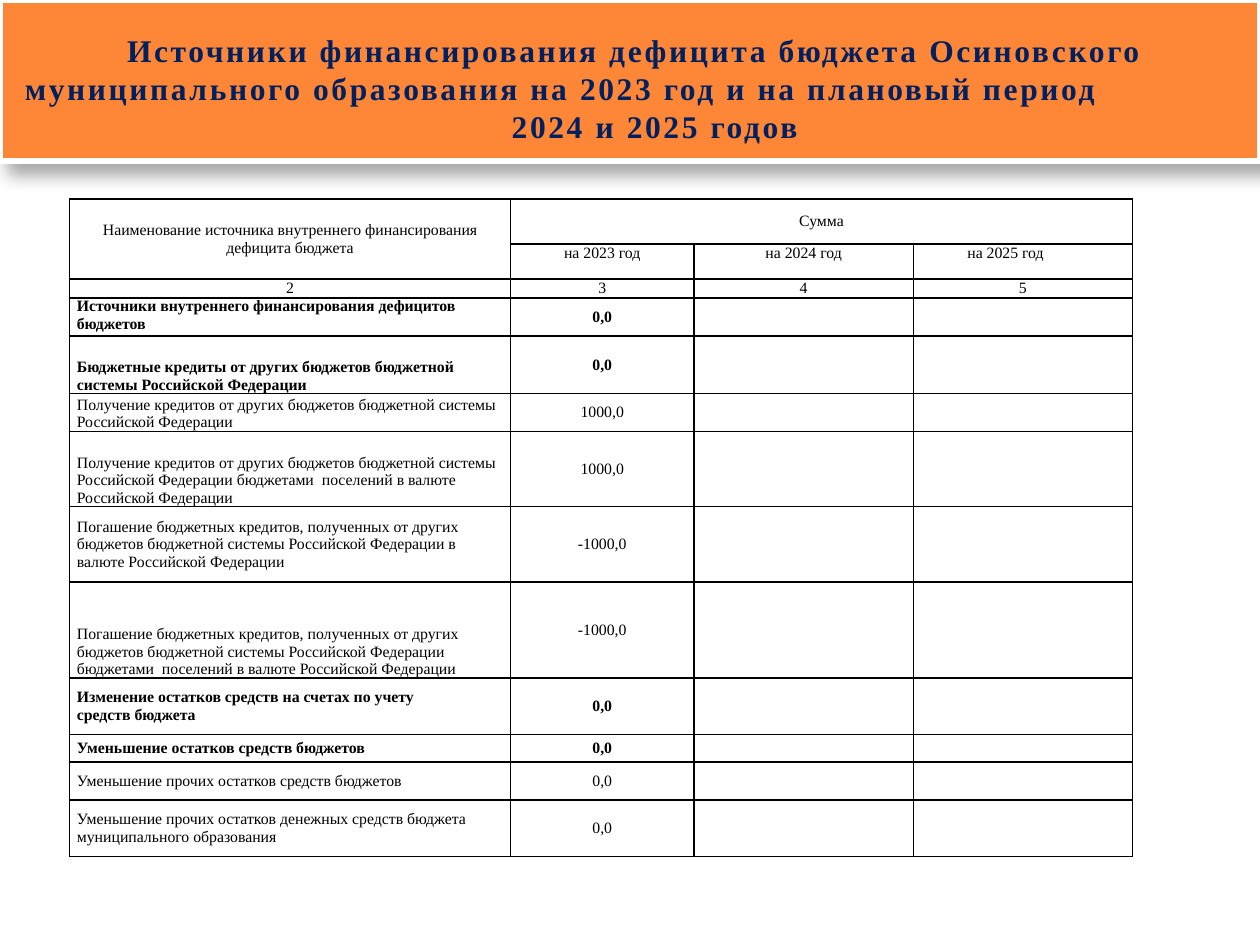
from lxml import etree
from pptx import Presentation
from pptx.dml.color import RGBColor
from pptx.enum.shapes import MSO_SHAPE
from pptx.enum.text import MSO_ANCHOR, PP_ALIGN
from pptx.oxml.ns import qn
from pptx.util import Cm, Pt

ORANGE = RGBColor(0xFE, 0x86, 0x37)
NAVY = RGBColor(0x00, 0x20, 0x60)
WHITE = RGBColor(0xFF, 0xFF, 0xFF)
BLACK = RGBColor(0x00, 0x00, 0x00)
RECT = MSO_SHAPE.RECTANGLE
LEFT, MID = PP_ALIGN.LEFT, PP_ALIGN.CENTER
TOP, CENTER, BOTTOM = MSO_ANCHOR.TOP, MSO_ANCHOR.MIDDLE, MSO_ANCHOR.BOTTOM

# text, alignment, left indent in cm
TITLE = [
    ("Источники финансирования дефицита бюджета Осиновского", MID, 0.16),
    ("муниципального образования на 2023 год и на плановый период", LEFT, 0.25),
    ("2024 и 2025 годов", MID, 1),
]
YEARS = ["на 2023 год", "на 2024 год", "на 2025 год"]
# name, value, anchor of the name, bold
SOURCES = [
    ("Источники внутреннего финансирования дефицитов бюджетов", "0,0", TOP, True),
    ("Бюджетные кредиты от других бюджетов бюджетной системы Российской Федерации",
     "0,0", BOTTOM, True),
    ("Получение кредитов от других бюджетов бюджетной системы Российской Федерации",
     "1000,0", BOTTOM, False),
    ("Получение кредитов от других бюджетов бюджетной системы Российской Федерации "
     "бюджетами  поселений в валюте Российской Федерации", "1000,0", BOTTOM, False),
    ("Погашение бюджетных кредитов, полученных от других бюджетов бюджетной системы "
     "Российской Федерации в валюте Российской Федерации", "-1000,0", CENTER, False),
    ("Погашение бюджетных кредитов, полученных от других бюджетов бюджетной системы "
     "Российской Федерации бюджетами  поселений в валюте Российской Федерации",
     "-1000,0", BOTTOM, False),
    ("Изменение остатков средств на счетах по учету\nсредств бюджета",
     "0,0", CENTER, True),
    ("Уменьшение остатков средств бюджетов", "0,0", CENTER, True),
    ("Уменьшение прочих остатков средств бюджетов", "0,0", CENTER, False),
    ("Уменьшение прочих остатков денежных средств бюджета муниципального образования",
     "0,0", CENTER, False),
]
WIDTHS = [8.89, 3.7, 4.42, 4.42]
HEIGHTS = [0.91, 0.69, 0.38, 0.77, 1.16, 0.76, 1.52, 1.52, 1.93, 1.14, 0.56, 0.76, 1.14]


class Deck:
    font = "Times New Roman"
    small = 9

    def __init__(self):
        self.prs = Presentation()
        self.prs.slide_width, self.prs.slide_height = Cm(25.4), Cm(19.05)
        self.slide = self.prs.slides.add_slide(self.prs.slide_layouts[6])

    def run(self, para, text, size, color, bold=False):
        run = para.add_run()
        run.text = text
        font = run.font
        font.name, font.size, font.bold = self.font, Pt(size), bold
        font.color.rgb = color
        return run

    def shade(self, shape):
        """Give the shape a soft shadow down to the right."""
        shape.shadow.inherit = False
        effects = shape._element.spPr.find(qn("a:effectLst"))
        outer = etree.SubElement(
            effects, qn("a:outerShdw"), blurRad=str(Pt(10.2)), dist=str(Pt(8)),
            dir="2700000", algn="tl", rotWithShape="0")
        color = etree.SubElement(outer, qn("a:srgbClr"), val="000000")
        etree.SubElement(color, qn("a:alpha"), val="35000")

    def banner(self, lines):
        box = self.slide.shapes.add_shape(RECT, 0, 0, Cm(25.4), Cm(3.25))
        box.fill.solid()
        box.fill.fore_color.rgb = ORANGE
        box.line.color.rgb = WHITE
        box.line.width = Pt(3)
        self.shade(box)
        frame = box.text_frame
        frame.word_wrap = True
        frame.vertical_anchor = CENTER
        frame.margin_top, frame.margin_bottom = Cm(0.4), Cm(0.1)
        for i, (text, align, indent) in enumerate(lines):
            para = frame.paragraphs[0] if i == 0 else frame.add_paragraph()
            para.alignment = align
            para._p.get_or_add_pPr().set("marL", str(Cm(indent)))
            run = self.run(para, text, 18, NAVY, True)
            run._r.get_or_add_rPr().set("spc", "150")

    def grid(self, left, top, widths, heights):
        frame = self.slide.shapes.add_table(
            len(heights), len(widths), Cm(left), Cm(top),
            Cm(sum(widths)), Cm(sum(heights)))
        table = frame.table
        table.first_row = table.horz_banding = False
        for col, width in zip(table.columns, widths):
            col.width = Cm(width)
        for row, height in zip(table.rows, heights):
            row.height = Cm(height)
        for cell in table.iter_cells():
            self.frame(cell)
        return table

    def frame(self, cell):
        """Set the borders, margins and empty line height of a cell."""
        props = cell._tc.get_or_add_tcPr()
        for side in ("a:lnL", "a:lnR", "a:lnT", "a:lnB"):
            line = etree.SubElement(props, qn(side), w=str(Pt(1)))
            fill = etree.SubElement(line, qn("a:solidFill"))
            etree.SubElement(fill, qn("a:srgbClr"), val=str(BLACK))
        cell.fill.background()
        cell.margin_left = cell.margin_right = Cm(0.15)
        cell.margin_top = cell.margin_bottom = 0
        para = cell.text_frame.paragraphs[0]
        etree.SubElement(para._p, qn("a:endParaRPr"), sz=str(self.small * 100))

    def cell(self, cell, text, align=MID, anchor=CENTER, bold=False):
        cell.vertical_anchor = anchor
        frame = cell.text_frame
        for i, line in enumerate(text.split("\n")):
            para = frame.paragraphs[0] if i == 0 else frame.add_paragraph()
            para.alignment = align
            self.run(para, line, self.small, BLACK, bold)


def main():
    deck = Deck()
    deck.banner(TITLE)
    table = deck.grid(1.4, 4.01, WIDTHS, HEIGHTS)
    table.cell(0, 0).merge(table.cell(1, 0))
    table.cell(0, 1).merge(table.cell(0, 3))
    deck.cell(table.cell(0, 0),
              "Наименование источника внутреннего финансирования дефицита бюджета")
    deck.cell(table.cell(0, 1), "Сумма")
    for col, year in enumerate(YEARS, 1):
        deck.cell(table.cell(1, col), year, anchor=TOP)
    table.cell(1, 3).margin_right = Cm(0.85)
    for col in range(4):
        deck.cell(table.cell(2, col), str(col + 2), anchor=TOP)
    for row, (name, value, anchor, bold) in enumerate(SOURCES, 3):
        deck.cell(table.cell(row, 0), name, LEFT, anchor, bold)
        deck.cell(table.cell(row, 1), value, bold=bold)
    deck.prs.save("out.pptx")


if __name__ == "__main__":
    main()
